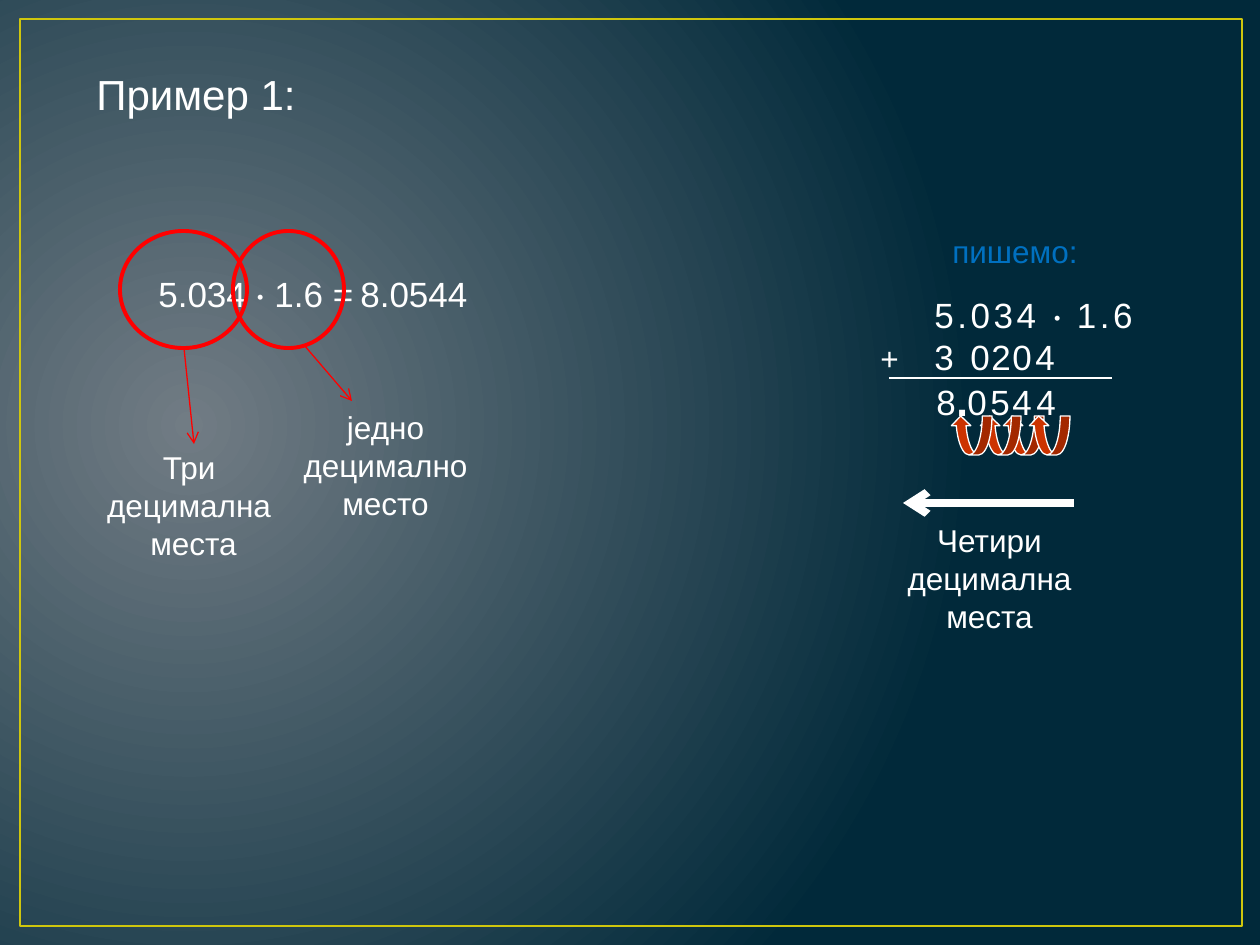
from lxml import etree
from pptx import Presentation
from pptx.dml.color import RGBColor
from pptx.enum.shapes import MSO_CONNECTOR as CONN, MSO_SHAPE as SHAPE
from pptx.enum.text import MSO_AUTO_SIZE as FIT, PP_ALIGN as ALIGN
from pptx.oxml import parse_xml
from pptx.oxml.ns import nsdecls, qn
from pptx.util import Pt

EMU_PER_PX = 914400 / 126
WHITE, RED, BLUE = "FFFFFF", "FF0000", "0070C0"
GOLD, RUST = "CFC60D", "CC3300"


def px(*lengths):
    return [round(v * EMU_PER_PX) for v in lengths]


def color(hex_code):
    return RGBColor.from_string(hex_code)


class Board:
    """Holds the text style and the current slide."""
    font = "Arial"

    def __init__(self, slide):
        self.slide = slide
        self.shapes = slide.shapes

    def background(self, inner, outer):
        """Radial gradient centred on the left half of the slide."""
        bg = parse_xml(
            f'<p:bg {nsdecls("p", "a")}><p:bgPr><a:gradFill rotWithShape="1"><a:gsLst>'
            f'<a:gs pos="0"><a:srgbClr val="{inner}"/></a:gs>'
            f'<a:gs pos="100000"><a:srgbClr val="{outer}"/></a:gs></a:gsLst>'
            '<a:path path="circle">'
            '<a:fillToRect l="15000" t="50000" r="85000" b="60000"/></a:path>'
            '</a:gradFill><a:effectLst/></p:bgPr></p:bg>')
        self.slide._element.cSld.insert(0, bg)

    def text(self, x, y, w, h, paragraphs, size=20, fill=WHITE, align=ALIGN.LEFT,
             bold=False, wrap=True, spacing=None):
        """Each paragraph is a list of runs; the dot operator is set in Calibri."""
        tf = self.shapes.add_textbox(*px(x, y, w, h)).text_frame
        tf.word_wrap = wrap
        tf.auto_size = FIT.SHAPE_TO_FIT_TEXT
        for i, runs in enumerate(paragraphs):
            p = tf.add_paragraph() if i else tf.paragraphs[0]
            p.alignment = align
            for words in runs:
                r = p.add_run()
                r.text = words
                r.font.name = "Calibri" if "·" in words else self.font
                r.font.size = Pt(size)
                r.font.bold = bold
                r.font.color.rgb = color(fill)
                if spacing:
                    r._r.get_or_add_rPr().set("spc", str(spacing * 100))

    def label(self, x, y, *lines):
        """Centred three-line caption."""
        self.text(x, y, 219, 127, [[line] for line in lines], 18, align=ALIGN.CENTER)

    def digits(self, y, figures, lefts):
        """One row of the written calculation, a digit to a column."""
        for figure, x in zip(figures, lefts):
            self.text(x, y, 45, 55, [[figure]], wrap=False)

    def shape(self, kind, x, y, w, h, line, width, fill=None, flip=False):
        s = self.shapes.add_shape(kind, *px(x, y, w, h))
        s.shadow.inherit = False
        if fill:
            s.fill.solid()
            s.fill.fore_color.rgb = color(fill)
        else:
            s.fill.background()
        s.line.color.rgb = color(line)
        s.line.width = Pt(width)
        if flip:
            s._element.spPr.xfrm.set("flipH", "1")

    def line(self, x1, y1, x2, y2, stroke, width=0.75, arrow=False):
        s = self.shapes.add_connector(CONN.STRAIGHT, *px(x1, y1, x2, y2))
        s.line.color.rgb = color(stroke)
        s.line.width = Pt(width)
        if arrow:
            etree.SubElement(s.line._get_or_add_ln(), qn("a:tailEnd"), type="arrow")
        etree.SubElement(s._element.spPr, qn("a:effectLst"))


def main():
    prs = Presentation()
    prs.slide_width, prs.slide_height = px(1260, 945)
    b = Board(prs.slides.add_slide(prs.slide_layouts[6]))
    b.background("717C84", "01293A")
    b.shape(SHAPE.RECTANGLE, 20, 19, 1222, 907, GOLD, 1.5)
    b.text(84, 62, 263, 63, [["Пример 1:"]], 24)

    # Product with its decimal places circled
    b.text(146, 266, 287, 55, [["5.034 ", "·", " 1.6 ="]])
    b.text(348, 266, 217, 55, [["8.0544"]])
    b.shape(SHAPE.OVAL, 120, 231, 127, 117, RED, 2.25)
    b.shape(SHAPE.OVAL, 233, 231, 111, 117, RED, 2.25)
    b.line(184, 348, 194, 444, RED, arrow=True)
    b.line(304, 345, 352, 401, RED, arrow=True)
    b.label(84, 442, "Три ", "децимална ", "места")
    b.label(276, 402, "једно", "децимално", "место")

    # Written calculation
    b.text(940, 226, 152, 50, [["пишемо:"]], 18, BLUE)
    b.text(922, 287, 289, 55, [["5.034 ", "· ", "1.6"]], spacing=2)
    b.text(868, 333, 87, 50, [["+"]], 18)
    b.digits(329, "30204", [922, 958, 979, 1000, 1023])
    b.line(889, 378, 1112, 378, WHITE)
    b.digits(374, "80544", [924, 955, 978, 1000, 1024])
    b.text(944, 368, 84, 64, [["."]], 24, bold=True)

    # Four jumps of the decimal point
    for x in (1003, 1029, 980, 951):
        b.shape(SHAPE.CURVED_UP_ARROW, x, 416, 41, 39, WHITE, 0.75, RUST, flip=True)
    b.line(1074, 503, 903, 503, WHITE, 4.5, arrow=True)
    b.label(880, 515, "Четири", "децимална места")

    prs.save("out.pptx")


if __name__ == "__main__":
    main()
